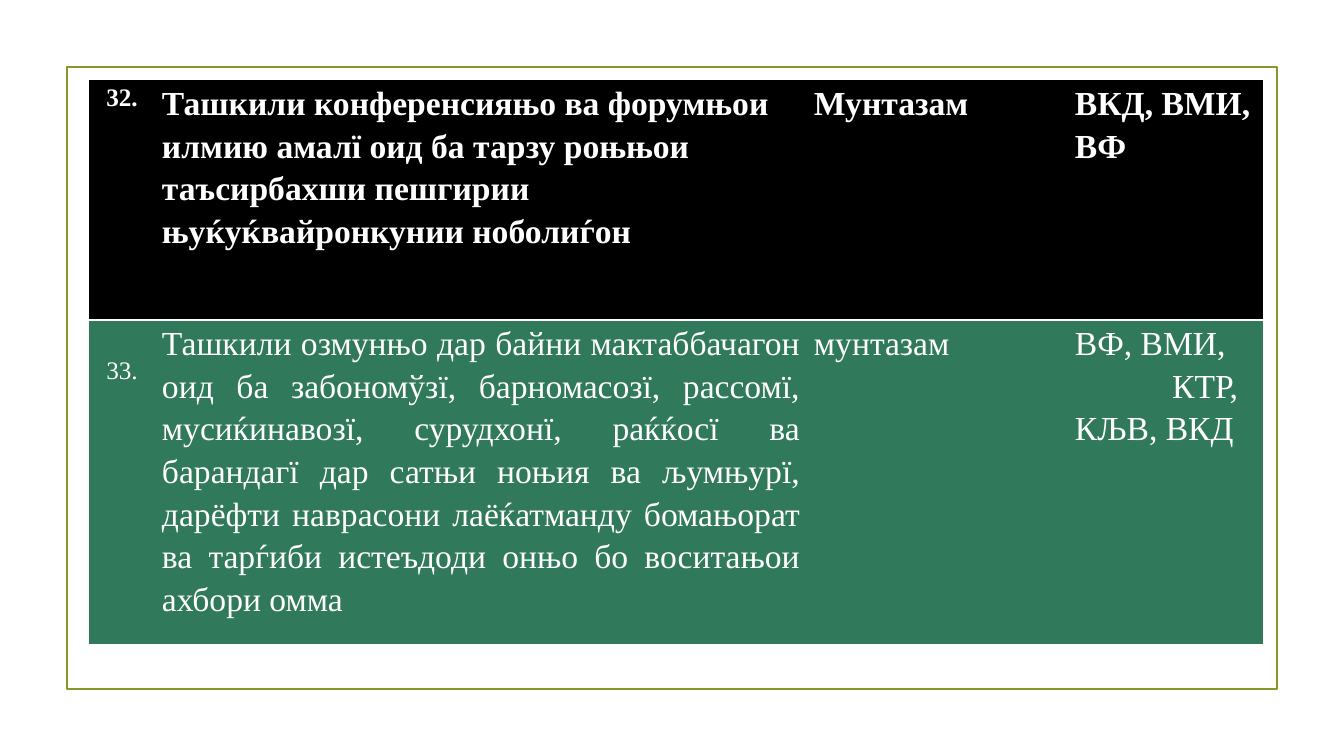
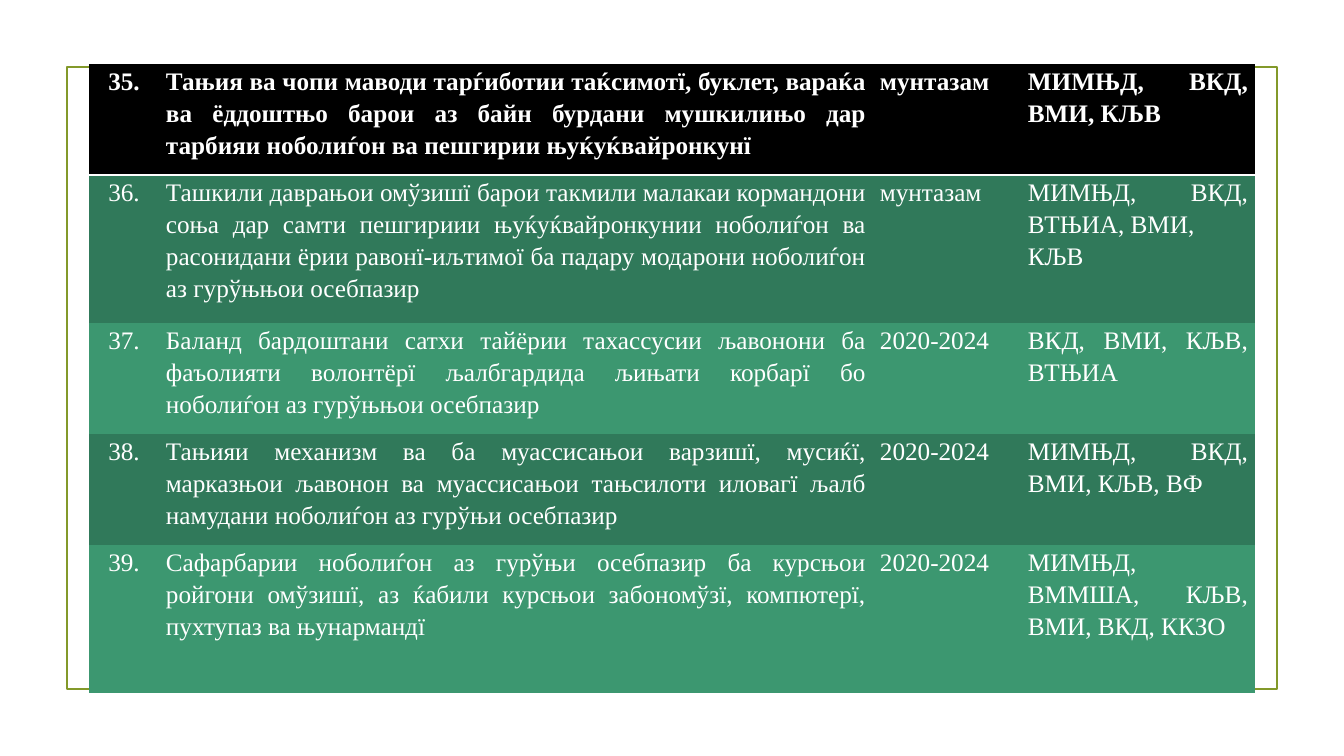
from lxml import etree
from pptx import Presentation
from pptx.dml.color import RGBColor
from pptx.enum.shapes import MSO_SHAPE
from pptx.enum.text import PP_ALIGN
from pptx.oxml.ns import qn
from pptx.util import Emu, Pt

RECTANGLE = MSO_SHAPE.RECTANGLE
LEFT, CENTER, RIGHT, JUSTIFY = (
    PP_ALIGN.LEFT, PP_ALIGN.CENTER, PP_ALIGN.RIGHT, PP_ALIGN.JUSTIFY)

SLIDE_WIDTH, SLIDE_HEIGHT = 1344, 756
EMU_PER_PX = 12192000 / SLIDE_WIDTH

WHITE = RGBColor(0xFF, 0xFF, 0xFF)
BLACK = RGBColor(0x00, 0x00, 0x00)
OLIVE = RGBColor(0x83, 0x99, 0x2A)
DARK_GREEN = RGBColor(0x30, 0x79, 0x5A)
LIGHT_GREEN = RGBColor(0x3C, 0x97, 0x70)
BAND_FILLS = (DARK_GREEN, LIGHT_GREEN)

FONT_NAME = "Times New Roman"
NUMBER_SIZE = 18
LINE_SPACING = 1.15
CELL_MARGIN = 7
NO_GRID_STYLE = "{2D5ABB26-0587-4C30-8999-92F81FD0307C}"

FRAME_BOX = (67, 67, 1210, 622)

EVENTS_COLUMNS = (66, 652, 261, 177, 10)
EVENTS_HEIGHTS = (240, 324)
EVENTS_ROWS = (
    ("32.",
     "Ташкили конференсияњо ва форумњои илмию амалї оид ба тарзу роњњои "
     "таъсирбахши пешгирии њуќуќвайронкунии ноболиѓон",
     "Мунтазам",
     "ВКД, ВМИ, ВФ"),
    ("33.",
     "Ташкили озмунњо дар байни мактаббачагон оид ба забономўзї, барномасозї, "
     "рассомї, мусиќинавозї, сурудхонї, раќќосї ва барандагї дар сатњи ноњия "
     "ва љумњурї, дарёфти наврасони лаёќатманду бомањорат ва тарѓиби истеъдоди "
     "онњо бо воситањои ахбори омма",
     "мунтазам",
     (("ВФ, ВМИ,", LEFT), ("КТР,", RIGHT), ("КЉВ, ВКД", LEFT))),
)

TRAINING_COLUMNS = (70, 714, 148, 234)
TRAINING_HEIGHTS = (111, 148, 111, 111, 148)
TRAINING_ROWS = (
    ("35.",
     "Тањия ва чопи маводи тарѓиботии таќсимотї, буклет, вараќа ва ёддоштњо "
     "барои аз байн бурдани мушкилињо дар тарбияи ноболиѓон ва пешгирии "
     "њуќуќвайронкунї",
     "мунтазам",
     "МИМЊД, ВКД, ВМИ, КЉВ"),
    ("36.",
     "Ташкили даврањои омўзишї барои такмили малакаи кормандони соња дар самти "
     "пешгириии њуќуќвайронкунии ноболиѓон ва расонидани ёрии равонї-иљтимої "
     "ба падару модарони ноболиѓон аз гурўњњои осебпазир",
     "мунтазам",
     (("МИМЊД, ВКД, ВТЊИА, ВМИ,", JUSTIFY), ("КЉВ", JUSTIFY))),
    ("37.",
     "Баланд бардоштани сатхи тайёрии тахассусии љавонони ба фаъолияти "
     "волонтёрї љалбгардида љињати корбарї бо ноболиѓон аз гурўњњои осебпазир",
     "2020-2024",
     "ВКД, ВМИ, КЉВ, ВТЊИА"),
    ("38.",
     "Тањияи механизм ва ба муассисањои варзишї, мусиќї, марказњои љавонон ва "
     "муассисањои тањсилоти иловагї љалб намудани ноболиѓон аз гурўњи осебпазир",
     "2020-2024",
     "МИМЊД, ВКД, ВМИ, КЉВ, ВФ"),
    ("39.",
     "Сафарбарии ноболиѓон аз гурўњи осебпазир ба курсњои ройгони омўзишї, аз "
     "ќабили курсњои забономўзї, компютерї, пухтупаз ва њунармандї",
     "2020-2024",
     "МИМЊД, ВММША, КЉВ, ВМИ, ВКД, ККЗО"),
)


def px(length):
    return Emu(round(length * EMU_PER_PX))


def add_frame(slide, box):
    frame = slide.shapes.add_shape(RECTANGLE, *map(px, box))
    frame.shadow.inherit = False
    frame.fill.background()
    frame.line.color.rgb = OLIVE
    frame.line.width = Pt(1.25)


def add_bottom_border(cell, color, width):
    properties = cell._tc.get_or_add_tcPr()
    border = etree.Element(qn("a:lnB"), w=str(Pt(width)))
    fill = etree.SubElement(border, qn("a:solidFill"))
    etree.SubElement(fill, qn("a:srgbClr"), val=str(color))
    properties.insert(0, border)


def style_cell(cell, fill_color):
    cell.margin_left = cell.margin_right = px(CELL_MARGIN)
    cell.margin_top = cell.margin_bottom = 0
    cell.fill.solid()
    cell.fill.fore_color.rgb = fill_color


def write_cell(cell, content, alignment, size, bold):
    lines = ((content, alignment),) if isinstance(content, str) else content
    text_frame = cell.text_frame
    for index, (text, line_alignment) in enumerate(lines):
        paragraph = text_frame.add_paragraph() if index else text_frame.paragraphs[0]
        paragraph.text = text
        paragraph.alignment = line_alignment
        paragraph.line_spacing = LINE_SPACING
        paragraph.font.name = FONT_NAME
        paragraph.font.size = Pt(size)
        paragraph.font.bold = bold
        paragraph.font.color.rgb = WHITE


def add_plan_table(slide, left, top, columns, heights, rows, text_size,
                   header_alignment):
    box = (left, top, sum(columns), sum(heights))
    graphic_frame = slide.shapes.add_table(len(rows), len(columns), *map(px, box))
    table = graphic_frame.table
    table.first_row = table.horz_banding = False
    table._tbl.tblPr.find(qn("a:tableStyleId")).text = NO_GRID_STYLE
    for column, width in zip(table.columns, columns):
        column.width = px(width)
    for row_index, (row, height, contents) in enumerate(
            zip(table.rows, heights, rows)):
        row.height = px(height)
        is_header = row_index == 0
        fill_color = BLACK if is_header else BAND_FILLS[(row_index - 1) % 2]
        text_alignment = header_alignment if is_header else JUSTIFY
        for cell in row.cells:
            style_cell(cell, fill_color)
            if is_header:
                add_bottom_border(cell, WHITE, 2)
        for column_index, content in enumerate(contents):
            is_number = column_index == 0
            write_cell(row.cells[column_index], content,
                       CENTER if is_number else text_alignment,
                       NUMBER_SIZE if is_number else text_size, is_header)
    return table


def add_framed_slide(presentation):
    slide = presentation.slides.add_slide(presentation.slide_layouts[6])
    add_frame(slide, FRAME_BOX)
    return slide


def build_events_slide(presentation):
    slide = add_framed_slide(presentation)
    table = add_plan_table(slide, 89, 80, EVENTS_COLUMNS, EVENTS_HEIGHTS,
                           EVENTS_ROWS, 24, LEFT)
    table.cell(0, 3).merge(table.cell(0, 4))
    table.cell(1, 0).margin_top = px(33)


def build_training_slide(presentation):
    slide = add_framed_slide(presentation)
    add_plan_table(slide, 89, 64, TRAINING_COLUMNS, TRAINING_HEIGHTS,
                   TRAINING_ROWS, 18, JUSTIFY)


def main():
    presentation = Presentation()
    presentation.slide_width = px(SLIDE_WIDTH)
    presentation.slide_height = px(SLIDE_HEIGHT)
    build_events_slide(presentation)
    build_training_slide(presentation)
    presentation.save("out.pptx")


if __name__ == "__main__":
    main()
